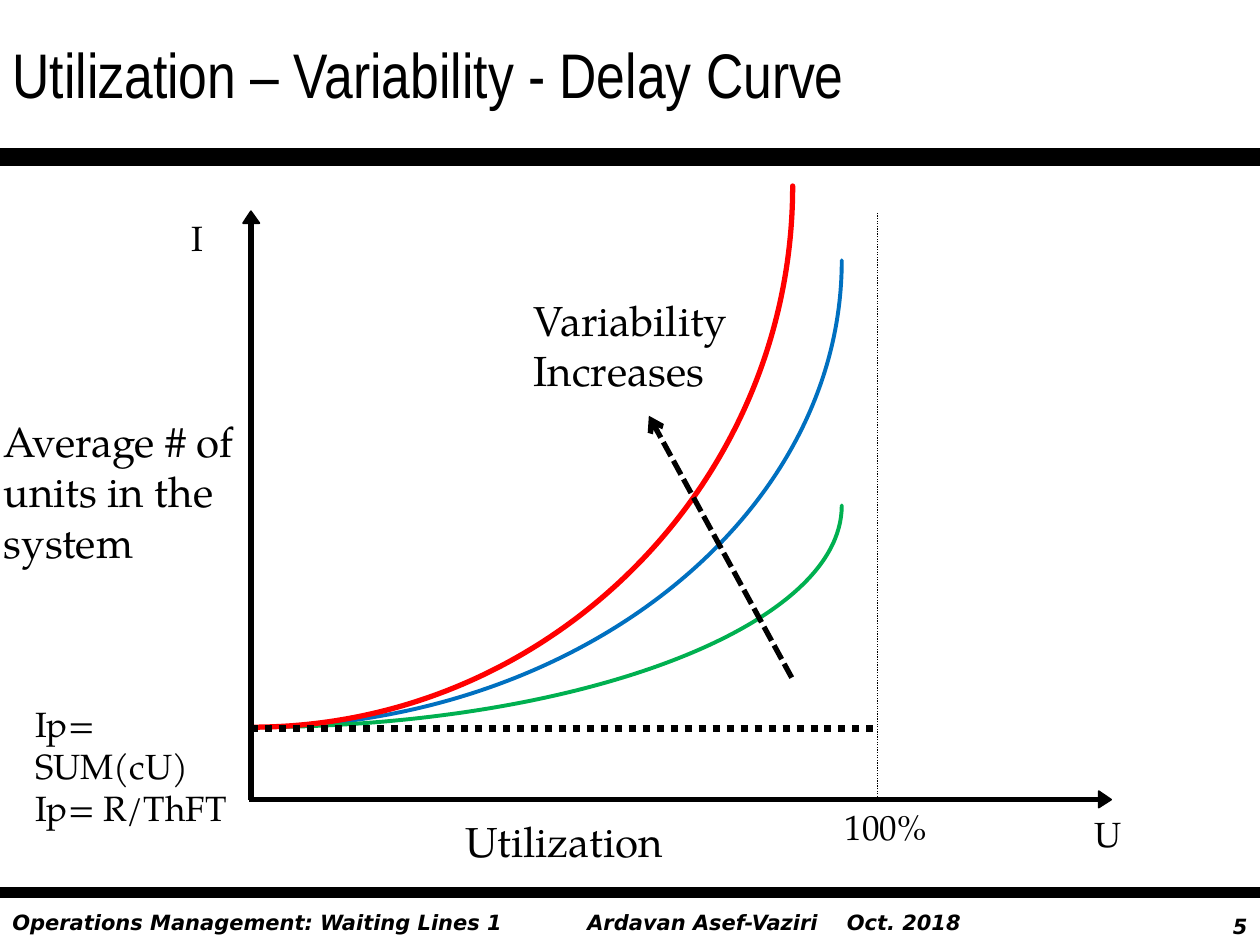
"""Build the utilization, variability and delay curve slide."""
from lxml import etree
from pptx import Presentation
from pptx import util as u
from pptx.dml.color import RGBColor
from pptx.enum import dml, shapes, text
from pptx.oxml.ns import qn

THEME = {
    "ink": "000000", "high": "FF0000", "medium": "0070C0", "low": "00B050",
    "title": {"name": "Arial Narrow", "size": u.Pt(36), "bold": False},
    "label": {"name": "TeX Gyre Pagella", "size": u.Pt(24)},
    "tick": {"name": "TeX Gyre Pagella", "size": u.Pt(20)},
    "footer": {"name": "DejaVu Sans", "size": u.Pt(12), "bold": True, "italic": True},
}
DOTS, DASHES = dml.MSO_LINE.ROUND_DOT, dml.MSO_LINE.SQUARE_DOT
LEFT, RIGHT = text.PP_ALIGN.LEFT, text.PP_ALIGN.RIGHT

WIDTH, HEIGHT = 25.4, 19.05
AXIS_X, AXIS_Y = 5.06, 16.12
AXIS_END, AXIS_TOP = 22.15, 4.47
FULL_USE = 17.69
CURVE_X, CURVE_Y = 5.08, 14.66
ARC_PULL = 0.55

TITLE = "Utilization – Variability - Delay Curve"
FOOTERS = [
    ("5", (23.5, 18.29, 1.9, 0.76), RIGHT),
    ("Ardavan Asef-Vaziri    Oct. 2018", (11.59, 18.21, 8.51, 0.76), LEFT),
    ("Operations Management: Waiting Lines 1", (0, 18.21, 11.86, 0.76), LEFT),
]
BARS = [((0, 3.17), (WIDTH, 3.17), 10), ((0, 17.99), (WIDTH, 17.99), 6)]
ARROWHEADS = [
    [(22.15, 15.95), (22.15, 16.28), (22.4, 16.12)],
    [(4.9, 4.5), (5.23, 4.5), (5.06, 4.26)],
]
CURVES = [
    ("medium", 16.97, 5.25, 2.25),
    ("low", 16.97, 10.19, 2.25),
    ("high", 15.98, 3.75, 3),
]
TREND = ((15.96, 13.66), (13.08, 8.38))
GUIDES = [
    ((AXIS_X - 0.05, AXIS_Y), (AXIS_END, AXIS_Y), 3, None),
    ((AXIS_X, AXIS_Y), (AXIS_X, AXIS_TOP), 3, None),
    ((AXIS_X, 14.68), (FULL_USE, 14.68), 4, DOTS),
    ((FULL_USE, AXIS_Y), (FULL_USE, 4.28), 0.75, DOTS),
]
LABELS = [
    ("Variability\nIncreases", (10.51, 5.81, 4.55, 2.31), "label", False),
    ("Average # of units in the system", (-0.17, 8.25, 5.41, 3.33), "label", True),
    ("Utilization", (9.13, 16.31, 4.78, 1.3), "label", False),
    ("U", (21.81, 16.26, 1.07, 1.12), "tick", False),
    ("100%", (16.78, 16.12, 2.18, 1.12), "tick", False),
    ("Ip= SUM(cU)\nIp= R/ThFT", (0.46, 14.03, 4.93, 1.96), "tick", True),
    ("I", (3.61, 4.24, 1.47, 1.12), "tick", True),
]


def cm(values):
    return [u.Cm(value) for value in values]


def color(name):
    return RGBColor.from_string(THEME[name])


def write(frame, words, style, align=LEFT):
    frame.text = words
    for paragraph in frame.paragraphs:
        paragraph.alignment = align
        for key, value in THEME[style].items():
            setattr(paragraph.font, key, value)
        paragraph.font.color.rgb = color("ink")


def add_text(slide, words, box, style, wrap=True, align=LEFT):
    frame = slide.shapes.add_textbox(*cm(box)).text_frame
    frame.word_wrap = wrap
    frame.auto_size = text.MSO_AUTO_SIZE.SHAPE_TO_FIT_TEXT
    write(frame, words, style, align)


def add_line(slide, start, end, weight, dash=None):
    line = slide.shapes.add_connector(shapes.MSO_CONNECTOR.STRAIGHT, *cm(start + end))
    line.line.color.rgb = color("ink")
    line.line.width = u.Pt(weight)
    if dash:
        line.line.dash_style = dash
    etree.SubElement(line._element.spPr, qn("a:effectLst"))
    return line


def add_outline(slide, points, tone, weight, closed):
    start, *rest = [cm(point) for point in points]
    builder = slide.shapes.build_freeform(*start)
    builder.add_line_segments(rest, close=closed)
    outline = builder.convert_to_shape()
    outline.shadow.inherit = False
    outline.line.color.rgb = color(tone)
    outline.line.width = u.Pt(weight)
    return outline


def add_arrowhead(slide, corners):
    head = add_outline(slide, corners, "ink", 1, True)
    head.fill.solid()
    head.fill.fore_color.rgb = color("ink")


def add_curve(slide, tone, end_x, top, weight):
    curve = add_outline(slide, [(end_x, top), (CURVE_X, CURVE_Y)], tone, weight, False)
    curve.fill.background()
    curve.line._get_or_add_ln().set("cap", "rnd")
    wide, tall = curve.width, curve.height
    segment = next(curve._element.iter(qn("a:lnTo")))
    bend = etree.Element(qn("a:cubicBezTo"))
    for x, y in [(wide, tall * ARC_PULL), (wide * ARC_PULL, tall), (0, tall)]:
        etree.SubElement(bend, qn("a:pt"), x=str(round(x)), y=str(round(y)))
    segment.getparent().replace(segment, bend)


def main():
    deck = Presentation()
    deck.slide_width, deck.slide_height = cm((WIDTH, HEIGHT))
    slide = deck.slides.add_slide(deck.slide_layouts[5])

    for words, box, align in FOOTERS:
        add_text(slide, words, box, "footer", align=align)
    for bar in BARS:
        add_line(slide, *bar)

    title = slide.shapes.title
    title.left, title.top, title.width, title.height = cm((0, 0, WIDTH, 2.97))
    title.text_frame.vertical_anchor = text.MSO_ANCHOR.MIDDLE
    write(title.text_frame, TITLE, "title")

    for corners in ARROWHEADS:
        add_arrowhead(slide, corners)
    for curve in CURVES:
        add_curve(slide, *curve)

    trend = add_line(slide, *TREND, 3, DASHES)
    etree.SubElement(trend.line._get_or_add_ln(), qn("a:tailEnd"), type="arrow")
    for guide in GUIDES:
        add_line(slide, *guide)
    for words, box, style, wrap in LABELS:
        add_text(slide, words, box, style, wrap)

    deck.save("out.pptx")


if __name__ == "__main__":
    main()
